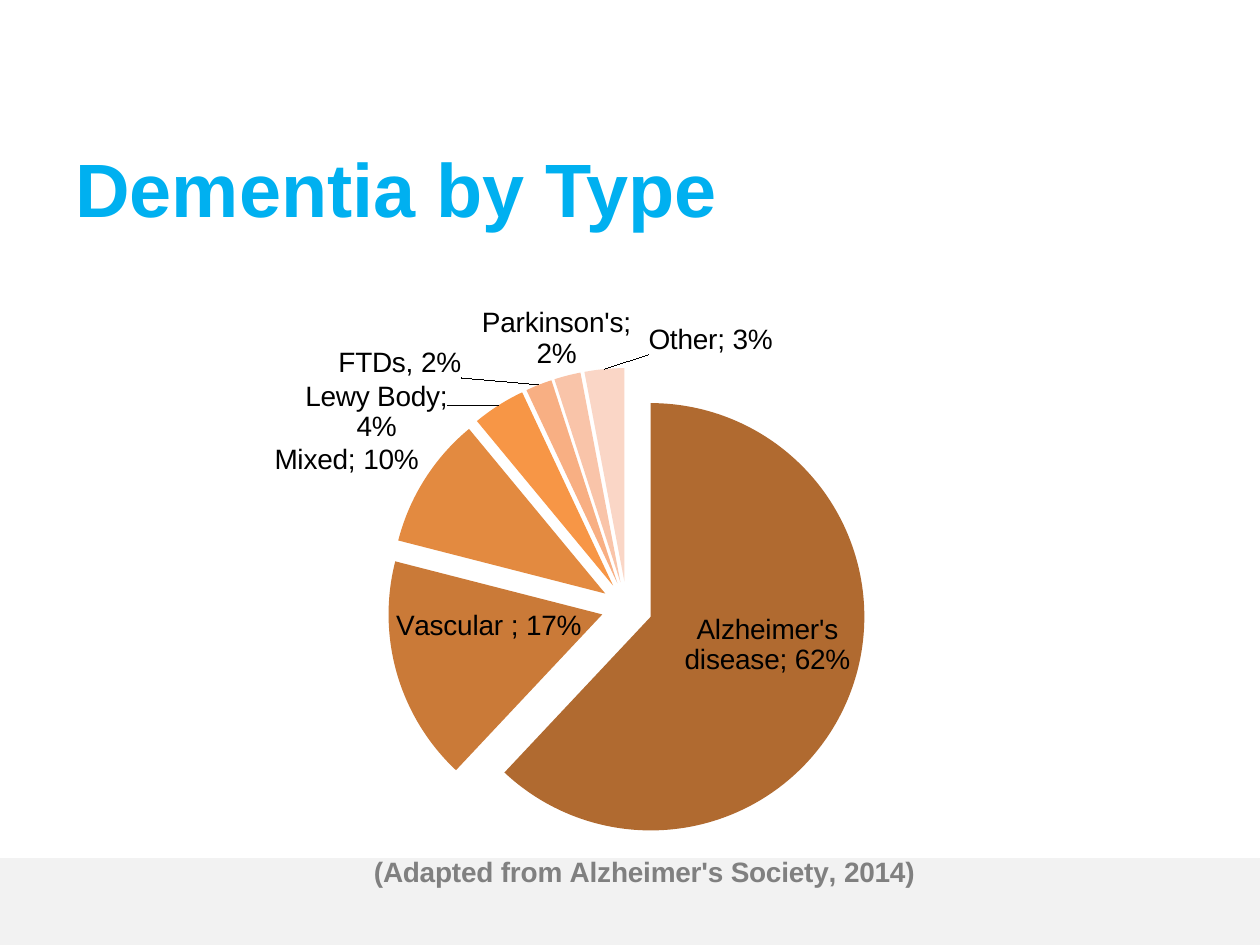
from dataclasses import dataclass

from pptx import Presentation
from pptx.chart.data import CategoryChartData
from pptx.dml.color import RGBColor
from pptx.enum.chart import XL_CHART_TYPE, XL_LABEL_POSITION
from pptx.enum.shapes import MSO_SHAPE
from pptx.enum.text import MSO_ANCHOR
from pptx.oxml import parse_xml
from pptx.util import Cm, Pt


@dataclass(frozen=True)
class Theme:
    face: str = "Arial"
    title: str = "00B0F0"
    note: str = "808080"
    ink: str = "000000"
    band: str = "F2F2F2"
    big: float = 43.2
    base: float = 18
    small: float = 16


THEME = Theme()
SPACE = "http://schemas.openxmlformats.org/drawingml/2006/chart"
SLICES = [
    ("Alzheimer's disease", 0.62, "B06A30"),
    ("Vascular ", 0.17, "CA7A38"),
    ("Mixed", 0.10, "E38A40"),
    ("Lewy Body", 0.04, "F79646"),
    ("Frontotemporal", 0.02, "F8AF83"),
    ("Parkinson's", 0.02, "F9C4A9"),
    ("Other", 0.03, "FAD6C6"),
]
SHIFTS = {3: (-0.05, 0.06), 4: (-0.08, 0), 5: (0.07, 0), 6: (0.18, -0.01)}
NAMED = {4: "FTDs, 2%"}


def style(font, size, color, bold=False):
    font.name = THEME.face
    font.size = Pt(size)
    font.bold = bold
    font.color.rgb = RGBColor.from_string(color)


def write(frame, text, **form):
    para = frame.paragraphs[0]
    run = para.add_run()
    run.text = text
    style(run.font, **form)


def node(tag, inner="", **attrs):
    pairs = "".join(f' {key}="{val}"' for key, val in attrs.items())
    return parse_xml(f'<c:{tag} xmlns:c="{SPACE}"{pairs}>{inner}</c:{tag}>')


def layout(x, y, w=None, h=None, edge=False, inner=False):
    parts = '<c:layoutTarget val="inner"/>' if inner else ""
    if edge:
        parts += '<c:xMode val="edge"/><c:yMode val="edge"/>'
    sizes = {"x": x, "y": y, "w": w, "h": h}
    parts += "".join(f'<c:{key} val="{val}"/>' for key, val in sizes.items() if val is not None)
    return node("layout", f"<c:manualLayout>{parts}</c:manualLayout>")


def place(owner, new, index):
    for old in owner.findall(f"{{{SPACE}}}layout"):
        owner.remove(old)
    owner.insert(index, new)


def add_band(slide, x, y, w, h):
    band = slide.shapes.add_shape(MSO_SHAPE.RECTANGLE, x, y, w, h)
    band.shadow.inherit = False
    band.fill.solid()
    band.fill.fore_color.rgb = RGBColor.from_string(THEME.band)
    band.line.fill.background()


def add_title(slide, x, y, w, h):
    frame = slide.shapes.add_textbox(x, y, w, h).text_frame
    frame.word_wrap = True
    frame.vertical_anchor = MSO_ANCHOR.MIDDLE
    write(frame, "Dementia by Type", size=THEME.big, color=THEME.title, bold=True)


def add_labels(series):
    labels = series.data_labels
    labels.show_value = labels.show_category_name = True
    labels.number_format = "0%"
    labels.number_format_is_linked = False
    labels.position = XL_LABEL_POSITION.BEST_FIT
    style(labels.font, THEME.small, THEME.ink)
    root = labels._element
    for old in root.findall(f"{{{SPACE}}}showLeaderLines"):
        root.remove(old)
    root.append(node("separator", "; "))
    root.append(node("showLeaderLines", val=1))
    for index, shift in SHIFTS.items():
        label = series.points[index].data_label
        label.position = XL_LABEL_POSITION.BEST_FIT
        if index in NAMED:
            write(label.text_frame, NAMED[index], size=THEME.small, color=THEME.ink)
        else:
            style(label.font, THEME.small, THEME.ink)
        item = next(e for e in root if e.tag.endswith("}dLbl") and e[0].get("val") == str(index))
        place(item, layout(*shift), 1)
        if index not in NAMED:
            item.insert(2, node("numFmt", formatCode="0%", sourceLinked=0))
        item.find(f"{{{SPACE}}}showCatName").set("val", "1")
        item.append(node("separator", "; "))


def add_pie(slide, x, y, w, h):
    data = CategoryChartData(number_format="0%")
    data.categories = [name for name, _, _ in SLICES]
    data.add_series("Series 1", [val for _, val, _ in SLICES])
    chart = slide.shapes.add_chart(XL_CHART_TYPE.PIE, x, y, w, h, data).chart
    chart.has_legend = False
    style(chart.font, THEME.base, THEME.ink)
    chart.has_title = True
    title = chart.chart_title
    write(title.text_frame, "(Adapted from Alzheimer's Society, 2014)",
          size=THEME.small, color=THEME.note, bold=True)
    place(title._element, layout(0.19, 0.9, edge=True), 1)
    area = chart._chartSpace.chart.plotArea
    place(area, layout(0.21, 0.17, 0.51, 0.78, edge=True, inner=True), 0)
    plot = chart.plots[0]
    plot.vary_by_categories = True
    series = plot.series[0]
    for index, (_, _, color) in enumerate(SLICES):
        fill = series.points[index].format.fill
        fill.solid()
        fill.fore_color.rgb = RGBColor.from_string(color)
    first = series._element.find(f"{{{SPACE}}}dPt")
    first.addprevious(node("explosion", val=12))
    for point in series._element.findall(f"{{{SPACE}}}dPt"):
        point.find(f"{{{SPACE}}}spPr").addprevious(node("explosion", val=12))
    add_labels(series)


def main():
    deck = Presentation()
    deck.slide_width, deck.slide_height = Cm(25.4), Cm(19.05)
    slide = deck.slides.add_slide(deck.slide_layouts[6])
    add_band(slide, Cm(0), Cm(17.3), Cm(25.4), Cm(1.75))
    add_pie(slide, Cm(3.84), Cm(4.22), Cm(18.92), Cm(14.33))
    add_title(slide, Cm(1.27), Cm(2.84), Cm(21.77), Cm(1.88))
    deck.save("out.pptx")


if __name__ == "__main__":
    main()
